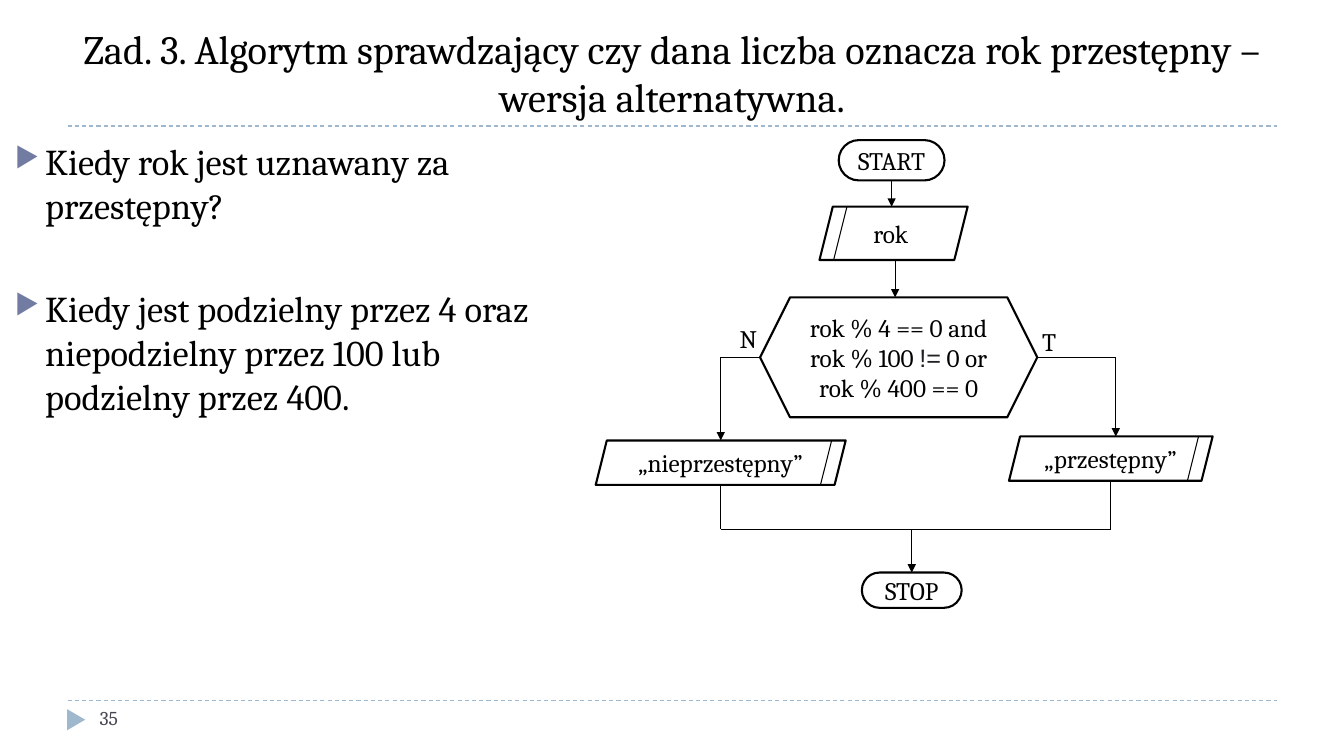
from dataclasses import dataclass

from lxml import etree
from pptx import Presentation
from pptx.dml.color import RGBColor
from pptx.enum.dml import MSO_LINE
from pptx.enum.shapes import MSO_CONNECTOR, MSO_SHAPE
from pptx.enum.text import MSO_ANCHOR, PP_ALIGN
from pptx.oxml.ns import qn
from pptx.util import Inches, Pt

STRAIGHT = MSO_CONNECTOR.STRAIGHT
TERMINAL = MSO_SHAPE.ROUNDED_RECTANGLE
DATA = MSO_SHAPE.PARALLELOGRAM
DECISION = MSO_SHAPE.HEXAGON
TRIANGLE = MSO_SHAPE.ISOSCELES_TRIANGLE
DASH = MSO_LINE.DASH
TOP, MIDDLE, BOTTOM = MSO_ANCHOR.TOP, MSO_ANCHOR.MIDDLE, MSO_ANCHOR.BOTTOM
LEFT, CENTER = PP_ALIGN.LEFT, PP_ALIGN.CENTER


@dataclass(frozen=True)
class Theme:
    """Colours, fonts and type sizes of the slide."""
    font: str = "Cambria"
    code_font: str = "Arial"
    ink: str = "000000"
    code_ink: str = "202124"
    rule: str = "9FB8CD"
    bullet: str = "727CA3"
    number: str = "464653"
    title_size: float = 28.8
    body_size: float = 26
    chart_size: float = 18
    number_size: float = 14
    thin: float = 0.75
    thick: float = 1.5


@dataclass(frozen=True)
class Box:
    """An area on a grid of tenth-inch columns and rows."""
    x: float
    y: float
    w: float
    h: float

    def inner(self, x, y, w, h):
        """Return an area placed relative to this one."""
        return Box(self.x + x, self.y + y, w, h)

    def point(self, x, y):
        """Return a grid point placed relative to this area."""
        return self.x + x, self.y + y

    def emu(self):
        """Return left, top, width and height as lengths."""
        return [grid(v) for v in (self.x, self.y, self.w, self.h)]


THEME = Theme()
PAGE = Box(0, 0, 133.33, 75)


def grid(count):
    """Convert grid columns or rows to a length."""
    return Inches(count / 10)


def rgb(value):
    """Return a colour from its hex value."""
    return RGBColor.from_string(value)


def add_run(p, text, size, color=THEME.ink, font=THEME.font):
    """Add one formatted run to a paragraph."""
    r = p.add_run()
    r.text = text
    r.font.size, r.font.name = Pt(size), font
    r.font.color.rgb = rgb(color)


def text_box(s, box, anchor=TOP):
    """Add a wrapping text box and return its text frame."""
    tf = s.shapes.add_textbox(*box.emu()).text_frame
    tf.word_wrap = True
    tf.vertical_anchor = anchor
    return tf


def add_path(s, points, arrow=False, color=THEME.ink, dash=None):
    """Draw straight connectors through the points, with an optional arrowhead."""
    for start, end in zip(points, points[1:]):
        c = s.shapes.add_connector(STRAIGHT, *[grid(v) for v in (*start, *end)])
        c.line.color.rgb = rgb(color)
        c.line.width = Pt(THEME.thin)
        if dash:
            c.line.dash_style = dash
        if arrow and end == points[-1]:
            ln = c._element.spPr.get_or_add_ln()
            etree.SubElement(ln, qn("a:tailEnd"), type="triangle")
        etree.SubElement(c._element.spPr, qn("a:effectLst"))


def add_node(s, box, kind, lines):
    """Draw an outlined flowchart block; each line is a list of text and code flags."""
    sp = s.shapes.add_shape(kind, *box.emu())
    sp.shadow.inherit = False
    sp.fill.background()
    sp.line.color.rgb = rgb(THEME.ink)
    sp.line.width = Pt(THEME.thick)
    if kind == TERMINAL:
        sp.adjustments[0] = 0.5
    tf = sp.text_frame
    tf.word_wrap = False
    tf.vertical_anchor = MIDDLE
    for i, line in enumerate(lines):
        p = tf.add_paragraph() if i else tf.paragraphs[0]
        p.alignment = CENTER
        for text, is_code in line:
            color, font = (THEME.code_ink, THEME.code_font) if is_code else (THEME.ink, THEME.font)
            add_run(p, text, THEME.chart_size, color, font)


def add_data(s, box, text, stripe_left):
    """Draw an input or output block with a slanted stripe on one side."""
    add_node(s, box, DATA, [[(text, False)]])
    slant, gap = box.h / 4, 1.4
    top = slant + gap if stripe_left else box.w - gap
    add_path(s, [box.point(top, 0), box.point(top - slant, box.h)])


def add_title(s, box):
    """Place the heading and the rule under it."""
    p = text_box(s, box, BOTTOM).paragraphs[0]
    p.alignment = CENTER
    add_run(p, "Zad. 3. Algorytm sprawdzający czy dana liczba oznacza rok przestępny – "
               "wersja alternatywna.", THEME.title_size)
    add_path(s, [box.point(0, box.h), box.point(box.w, box.h)], color=THEME.rule, dash=DASH)


def add_body(s, box):
    """Place the bulleted question and answer."""
    tf = text_box(s, box)
    texts = ("Kiedy rok jest uznawany za przestępny?",
             "Kiedy jest podzielny przez 4 oraz niepodzielny przez 100 lub podzielny przez 400.")
    for i, text in enumerate(texts):
        p = tf.add_paragraph() if i else tf.paragraphs[0]
        p.alignment = LEFT
        if i:
            p.space_before = Pt(43)
        pPr = p._p.get_or_add_pPr()
        pPr.set("marL", str(grid(3)))
        pPr.set("indent", str(grid(-3)))
        color = etree.SubElement(pPr, qn("a:buClr"))
        etree.SubElement(color, qn("a:srgbClr"), val=THEME.bullet)
        etree.SubElement(pPr, qn("a:buSzPct"), val="76000")
        etree.SubElement(pPr, qn("a:buChar"), char="▶")
        add_run(p, text, THEME.body_size)


def add_flowchart(s, box):
    """Draw the leap-year flowchart."""
    start = box.inner(24.1, 0, 10.5, 4)
    year = box.inner(22.2, 6.6, 14.7, 5.3)
    test = box.inner(16.3, 15.6, 27.5, 11.9)
    no = box.inner(0, 29.8, 24.8, 4.4)
    yes = box.inner(41, 29.4, 20.2, 4.4)
    stop = box.inner(26.4, 42.9, 9.9, 3.5)

    add_node(s, start, TERMINAL, [[("START", False)]])
    add_data(s, year, "rok ", True)
    add_node(s, test, DECISION, [
        [("rok % 4 == 0 and", False)],
        [("rok % 100 ", False), ("!=", True), (" 0 or", False)],
        [("rok % 400 == 0", False)]])
    add_data(s, no, "„nieprzestępny”", False)
    add_data(s, yes, "„przestępny”", False)
    add_node(s, stop, TERMINAL, [[("STOP", False)]])

    start_x, test_x, stop_x = (b.x + b.w / 2 for b in (start, test, stop))
    no_x, yes_x = no.x + no.w / 2, yes.x + yes.w / 2
    yes_in = yes_x + 0.5
    test_y, join_y = test.y + test.h / 2, box.y + 38.6
    add_path(s, [(start_x, start.y + start.h), (start_x, year.y)], True)
    add_path(s, [(test_x - 0.35, year.y + year.h), (test_x - 0.35, test.y)], True)
    add_path(s, [(test.x, test_y), (no_x, test_y), (no_x, no.y)], True)
    add_path(s, [(test.x + test.w, test_y), (yes_in, test_y), (yes_in, yes.y)], True)
    add_path(s, [(no_x, no.y + no.h), (no_x, join_y), (stop_x, join_y), (stop_x, stop.y)], True)
    add_path(s, [(yes_x, yes.y + yes.h), (yes_x, join_y), (stop_x, join_y)])

    for label, x, y in (("N", 13.3, 17.7), ("T", 43.3, 18)):
        tf = text_box(s, box.inner(x, y, 4.2, 4))
        add_run(tf.paragraphs[0], label, THEME.chart_size)


def add_footer(s, box):
    """Place the lower rule, its marker and the slide number."""
    add_path(s, [box.point(0, 0), box.point(box.w, 0)], color=THEME.rule, dash=DASH)
    sp = s.shapes.add_shape(TRIANGLE, *box.inner(-0.2, 1, 2.1, 1.8).emu())
    sp.rotation = 90
    sp.shadow.inherit = False
    sp.fill.solid()
    sp.fill.fore_color.rgb = rgb(THEME.rule)
    sp.line.fill.background()
    tf = text_box(s, box.inner(2.2, 0, 28.9, box.h))
    add_run(tf.paragraphs[0], "35", THEME.number_size, THEME.number)


def main():
    """Build and save the slide."""
    prs = Presentation()
    prs.slide_width, prs.slide_height = grid(PAGE.w), grid(PAGE.h)
    s = prs.slides.add_slide(prs.slide_layouts[6])
    add_title(s, PAGE.inner(6.7, 1.7, 120, 10.8))
    add_body(s, PAGE.inner(0.5, 13.3, 59.4, 56.2))
    add_flowchart(s, PAGE.inner(59.1, 13.9, 61.2, 46.4))
    add_footer(s, PAGE.inner(6.7, 69.5, 120, 4))
    prs.save("out.pptx")


if __name__ == "__main__":
    main()
